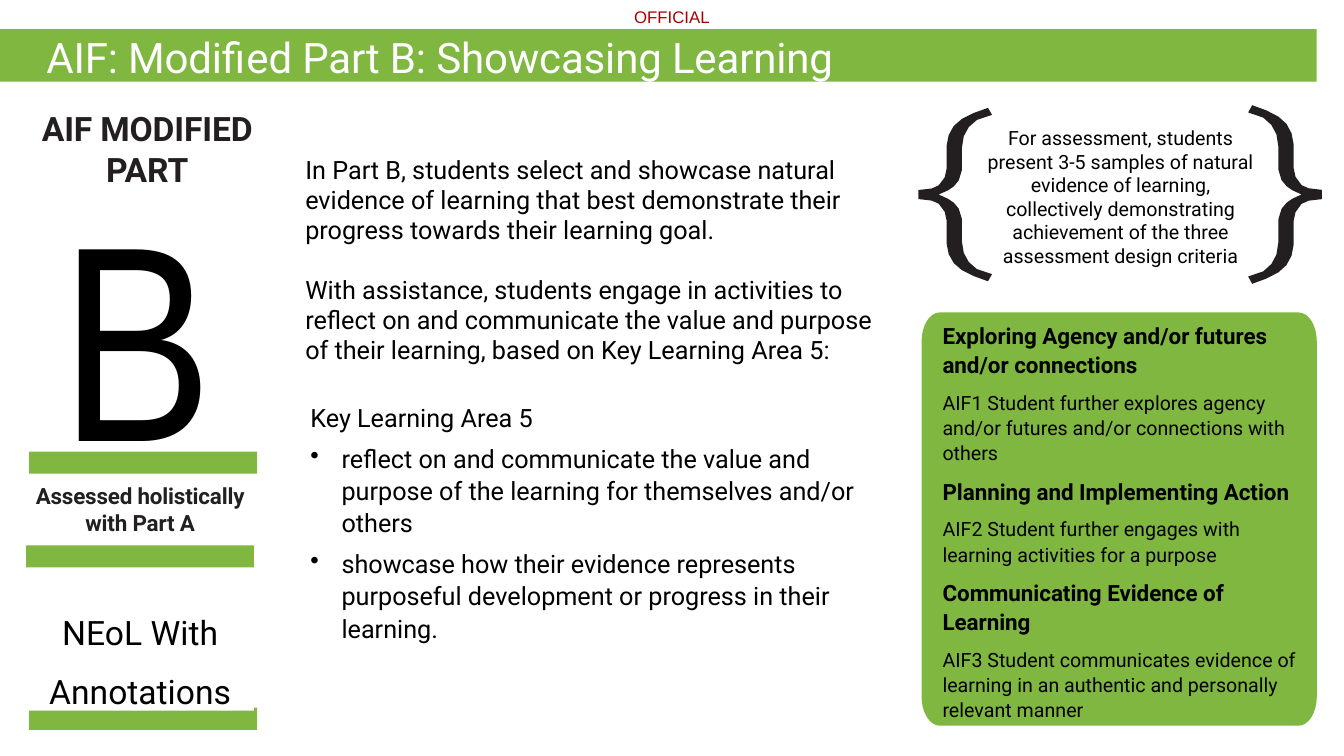
from math import cos, pi, sin

from lxml import etree
from pptx import Presentation
from pptx.dml.color import RGBColor
from pptx.enum.shapes import MSO_SHAPE
from pptx.enum.text import MSO_ANCHOR, PP_ALIGN
from pptx.oxml.ns import qn
from pptx.util import Inches, Pt

RECT = MSO_SHAPE.RECTANGLE
TOP = MSO_ANCHOR.TOP
LEFT, CENTER = PP_ALIGN.LEFT, PP_ALIGN.CENTER

COLORS = {
    "green": "80B740",
    "ink": "231F20",
    "black": "000000",
    "white": "FFFFFF",
    "red": "A80000",
}

BRACE_OUTER = [(0.69, 0.86), (0.55, 0.81), (0.43, 0.75), (0.35, 0.68),
               (0.30, 0.59), (0.28, 0.49), (0.28, 0.26), (0.26, 0.17),
               (0.20, 0.09), (0.13, 0.06), (0, 0.045)]
BRACE_INNER = [(0.20, 0), (0.29, 0.04), (0.35, 0.08), (0.40, 0.14),
               (0.43, 0.24), (0.43, 0.46), (0.45, 0.58), (0.50, 0.67),
               (0.58, 0.74), (0.73, 0.79)]

CRITERIA = [
    ("Exploring Agency and/or futures and/or connections",
     "AIF1 Student further explores agency and/or futures and/or connections with others"),
    ("Planning and Implementing Action",
     "AIF2 Student further engages with learning activities for a purpose"),
    ("Communicating Evidence of Learning",
     "AIF3 Student communicates evidence of learning in an authentic and personally relevant manner"),
]


def rgb(name):
    return RGBColor.from_string(COLORS[name])


def paint(sp, color):
    sp.shadow.inherit = False
    sp.fill.solid()
    sp.fill.fore_color.rgb = rgb(color)
    sp.line.fill.background()
    return sp


def add_bar(s, x, y, w, h, color="green"):
    sp = s.shapes.add_shape(RECT, Inches(x), Inches(y), Inches(w), Inches(h))
    return paint(sp, color)


def add_outline(s, points, color):
    corners = [(Inches(x), Inches(y)) for x, y in points]
    builder = s.shapes.build_freeform(*corners[0])
    builder.add_line_segments(corners[1:], close=True)
    return paint(builder.convert_to_shape(), color)


def add_panel(s, x, y, w, h, rx, ry):
    centers = [(x + w - rx, y + h - ry), (x + rx, y + h - ry),
               (x + rx, y + ry), (x + w - rx, y + ry)]
    points = []
    for quarter, (cx, cy) in enumerate(centers):
        for step in range(9):
            angle = (quarter + step / 8) * pi / 2
            points.append((cx + rx * cos(angle), cy + ry * sin(angle)))
    add_outline(s, points, "green")


def add_brace(s, tip_x, mid_y, direction, stretch=1):
    half = BRACE_OUTER[::-1] + BRACE_INNER[:0:-1]
    upper = BRACE_OUTER
    lower = [(x, -y) for x, y in BRACE_OUTER[::-1] + BRACE_INNER[::-1]]
    ring = upper + lower + BRACE_INNER[1:]
    add_outline(s, [(tip_x + direction * x, mid_y - stretch * y) for x, y in ring], "ink")


def set_frame(sp, insets=(0.1, 0.05, 0.1, 0.05), wrap=True):
    tf = sp.text_frame
    tf.word_wrap = wrap
    tf.vertical_anchor = TOP
    tf.margin_left, tf.margin_top, tf.margin_right, tf.margin_bottom = map(Inches, insets)
    return tf


def add_text_box(s, x, y, w, h, **frame):
    sp = s.shapes.add_textbox(Inches(x), Inches(y), Inches(w), Inches(h))
    return set_frame(sp, **frame)


def add_line(tf, text, size, color="black", font="Roboto", bold=False, align=LEFT,
             before=0, after=0, spacing=None, tracking=None):
    p = tf.paragraphs[0]
    if p.runs:
        p = tf.add_paragraph()
    r = p.add_run()
    r.text = text
    p.alignment = align
    p.space_before, p.space_after = Pt(before), Pt(after)
    if spacing:
        p.line_spacing = spacing
    p.font.size = Pt(size)
    p.font.name = font
    p.font.bold = bold
    p.font.color.rgb = rgb(color)
    if tracking:
        r._r.get_or_add_rPr().set("spc", str(tracking))
    return p


def add_bullet(p, indent):
    pPr = p._p.get_or_add_pPr()
    pPr.set("marL", str(Inches(indent)))
    pPr.set("indent", str(-Inches(indent)))
    bullet = etree.Element(qn("a:buChar"), char="•")
    pPr.find(qn("a:defRPr")).addprevious(bullet)


def add_header(s):
    tf = add_text_box(s, 6.29, 0.07, 0.8, 0.2, insets=(0, 0, 0, 0), wrap=False)
    add_line(tf, "OFFICIAL", 12, "red", "Arial")
    tf = set_frame(add_bar(s, 0, 0.29, 13.06, 0.52), insets=(0.46, 0.02, 0, 0))
    add_line(tf, "AIF: Modified Part B: Showcasing Learning", 30, "white",
             before=1.4, tracking=-10)


def add_part_column(s):
    tf = add_text_box(s, 0.22, 1.57, 2.28, 3.45)
    add_line(tf, "B", 199, font="Arial Narrow", align=CENTER)
    for x, y in [(0.29, 4.48), (0.29, 7.02), (0.26, 5.41)]:
        add_bar(s, x, y, 2.26, 0.22)
    label = dict(color="ink", bold=True, align=CENTER, before=0.7, tracking=-10)
    tf = add_text_box(s, 0.34, 1.06, 2.24, 0.83, insets=(0, 0.01, 0, 0))
    for text in ("AIF MODIFIED", "PART"):
        add_line(tf, text, 24, **label)
    tf = add_text_box(s, 0.23, 4.77, 2.32, 0.55, insets=(0, 0.01, 0, 0))
    add_line(tf, "Assessed holistically with Part A", 16, **label)
    tf = set_frame(add_bar(s, 0.26, 5.83, 2.26, 1.22, "white"))
    for text in ("NEoL With", "Annotations"):
        add_line(tf, text, 24, align=CENTER, spacing=Pt(42.5))


def add_learning_area(s):
    tf = add_text_box(s, 2.93, 1.48, 5.87, 2.22)
    add_line(tf, "In Part B, students select and showcase natural evidence of learning "
             "that best demonstrate their progress towards their learning goal.", 18, after=21)
    add_line(tf, "With assistance, students engage in activities to reflect on and communicate "
             "the value and purpose of their learning, based on Key Learning Area 5:", 18)
    tf = add_text_box(s, 2.98, 3.92, 5.63, 2.52)
    add_line(tf, "Key Learning Area 5", 18, before=6, spacing=1.07)
    for text in ("reflect on and communicate the value and purpose of the learning "
                 "for themselves and/or others",
                 "showcase how their evidence represents purposeful development "
                 "or progress in their learning."):
        add_bullet(add_line(tf, text, 18, before=6, spacing=1.07), 0.31)


def add_assessment(s):
    add_panel(s, 9.14, 3.1, 3.92, 4.1, 0.18, 0.29)
    add_brace(s, 9.11, 1.93, 1)
    add_brace(s, 13.11, 1.93, -1, 1.03)
    tf = add_text_box(s, 9.63, 1.2, 2.97, 1.51)
    add_line(tf, "For assessment, students present 3-5 samples of natural evidence of learning, "
             "collectively demonstrating achievement of the three assessment design criteria",
             14, align=CENTER)
    tf = add_text_box(s, 9.25, 3.13, 3.84, 4.11)
    for heading, detail in CRITERIA:
        add_line(tf, heading, 16, bold=True, after=8, spacing=1.07)
        add_line(tf, detail, 14, after=8, spacing=1.07)


def main():
    prs = Presentation()
    prs.slide_width, prs.slide_height = Inches(13.33), Inches(7.5)
    s = prs.slides.add_slide(prs.slide_layouts[6])
    add_header(s)
    add_part_column(s)
    add_learning_area(s)
    add_assessment(s)
    prs.save("out.pptx")


if __name__ == "__main__":
    main()
